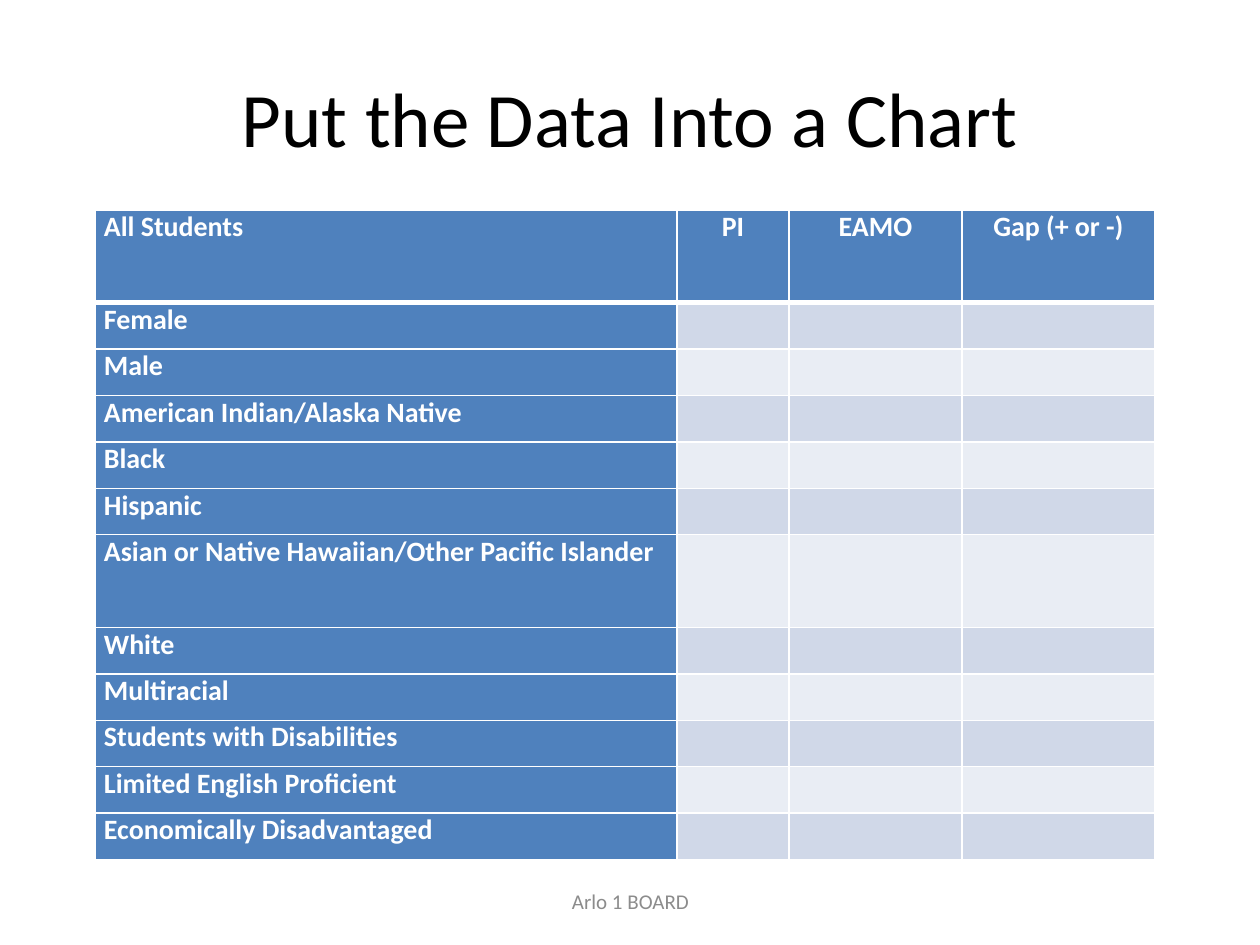
"""Build a slide with a table for comparing student group data."""
from lxml import etree
from pptx import Presentation
from pptx import util as u
from pptx.dml.color import RGBColor
from pptx.enum import text
from pptx.oxml.ns import qn

SCALE = 914400 / 126
BLUE, WHITE = "4F81BD", "FFFFFF"
BANDS = ["D0D8E8", "E9EDF4"]
HEADS = ["All Students", "PI", "EAMO", "Gap (+ or -)"]
GROUPS = [
    "Female",
    "Male",
    "American Indian/Alaska Native",
    "Black",
    "Hispanic",
    "Asian or Native Hawaiian/Other Pacific Islander",
    "White",
    "Multiracial",
    "Students with Disabilities",
    "Limited English Proficient",
    "Economically Disadvantaged",
]
WIDTHS = [582, 112, 173, 193]
TALL = {0, 6}


def px(n):
    """Turn pixels into EMU."""
    return u.Emu(round(n * SCALE))


def tint(code):
    """Turn a hex string into a colour."""
    return RGBColor.from_string(code)


def write(frame, words, size, code, bold=False, align=text.PP_ALIGN.CENTER):
    """Put one formatted paragraph into a text frame."""
    para = frame.paragraphs[0]
    para.text = words
    para.alignment = align
    font = para.font
    font.name, font.size, font.bold = "Calibri", u.Pt(size), bold
    font.color.rgb = tint(code)


def label(shape, box, words, size, code):
    """Place a shape and write centred text in it."""
    shape.left, shape.top, shape.width, shape.height = map(px, box)
    frame = shape.text_frame
    frame.word_wrap = True
    frame.vertical_anchor = text.MSO_ANCHOR.MIDDLE
    write(frame, words, size, code)


def edge(cell, sides):
    """Draw white cell borders from a map of side to width in points."""
    props = cell._tc.get_or_add_tcPr()
    for spot, (side, width) in enumerate(sides.items()):
        line = etree.Element(qn(f"a:ln{side}"), w=str(u.Pt(width)))
        fill = etree.SubElement(line, qn("a:solidFill"))
        etree.SubElement(fill, qn("a:srgbClr"), val=WHITE)
        props.insert(spot, line)


def style(cell, row, col, words):
    """Fill, frame and write one table cell."""
    head = row == 0
    cell.fill.solid()
    cell.fill.fore_color.rgb = tint(BLUE if head or col == 0 else BANDS[(row - 1) % 2])
    cell.margin_left = cell.margin_right = px(9)
    cell.margin_top = cell.margin_bottom = 0
    edge(cell, {"L": 1, "R": 1, "T": 3 if row == 1 else 1, "B": 3 if head else 1})
    align = text.PP_ALIGN.CENTER if col else text.PP_ALIGN.LEFT
    write(cell.text_frame, words, 16, WHITE, True, align)


def grid(slide, left, top, height):
    """Add the table of groups, with tall rows twice the plain height."""
    rows = [HEADS] + [[name, "", "", ""] for name in GROUPS]
    unit = height / (len(rows) + len(TALL))
    table = slide.shapes.add_table(
        len(rows), len(HEADS), px(left), px(top), px(sum(WIDTHS)), px(height)
    ).table
    table.first_col = True
    for col, width in enumerate(WIDTHS):
        table.columns[col].width = px(width)
    for row, cells in enumerate(rows):
        table.rows[row].height = px(unit * (2 if row in TALL else 1))
        for col, words in enumerate(cells):
            style(table.cell(row, col), row, col, words)


def main():
    """Build and save the slide."""
    deck = Presentation()
    deck.slide_width, deck.slide_height = px(1260), px(945)
    slide = deck.slides.add_slide(deck.slide_layouts[5])
    label(slide.shapes.title, (63, 38, 1134, 157), "Put the Data Into a Chart", 44, "000000")
    foot = slide.shapes.add_textbox(0, 0, 0, 0)
    label(foot, (431, 876, 399, 50), "Arlo 1 BOARD", 12, "8C8C8C")
    grid(slide, 95, 210, 650)
    deck.save("out.pptx")


if __name__ == "__main__":
    main()
